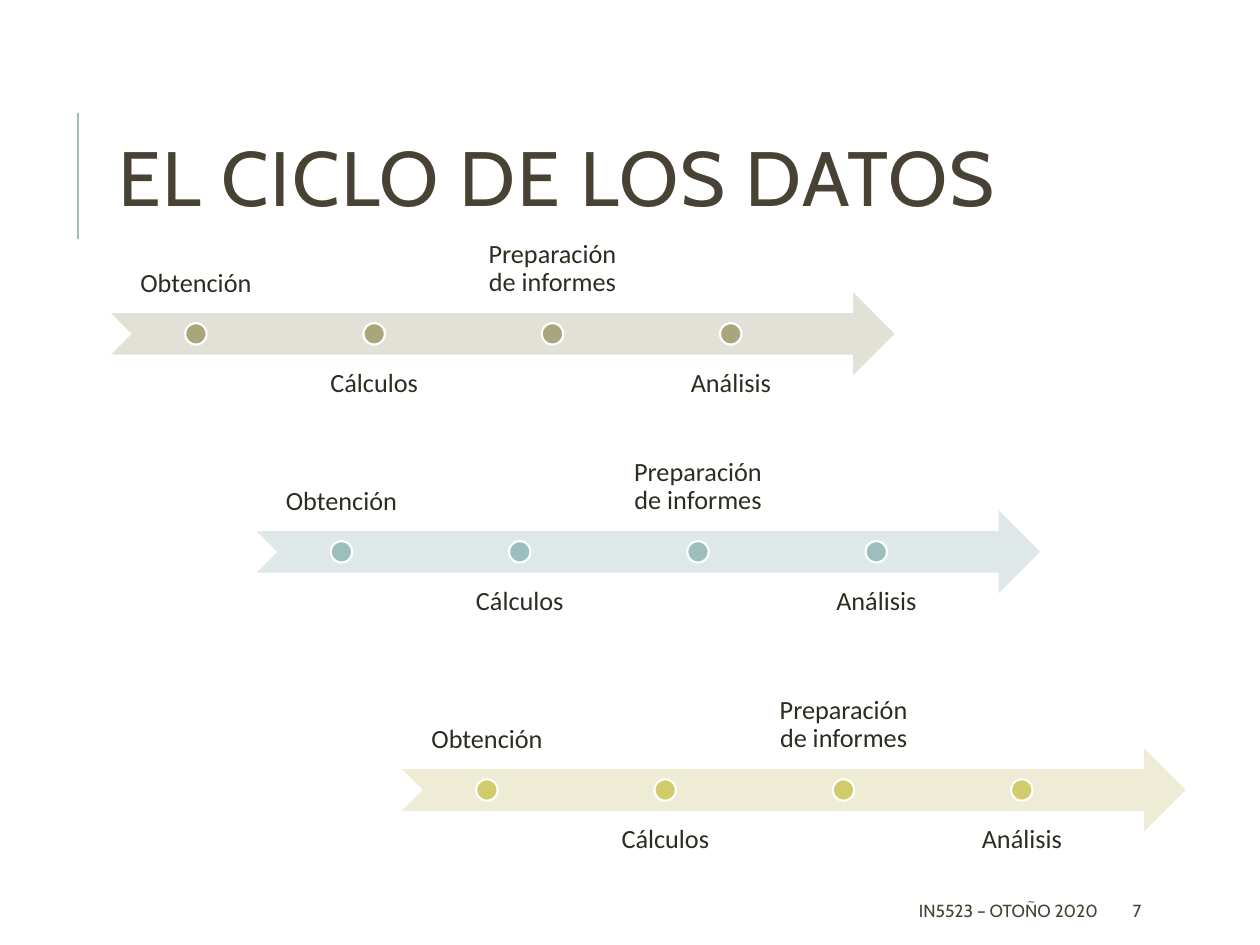
"""Build the data cycle slide: three staggered arrow timelines."""
import pptx
import pptx.util
import pptx.dml.color
import pptx.enum.shapes
import pptx.enum.text
import pptx.oxml.ns
import lxml.etree
from dataclasses import dataclass

Inches, Pt = pptx.util.Inches, pptx.util.Pt
RGB = pptx.dml.color.RGBColor.from_string
SHAPE = pptx.enum.shapes.MSO_SHAPE
ALIGN = pptx.enum.text.PP_ALIGN
ANCHOR = pptx.enum.text.MSO_ANCHOR

TITLE = "EL CICLO DE LOS DATOS"
FOOTER = "IN5523 – OTOÑO 2020"
NUMBER = "7"
STEPS = ["Obtención", "Cálculos", "Preparación de informes", "Análisis"]
TIMELINES = [
    {"top": 2.32, "arrow": "E2E1D7", "dot": "A9A57C"},
    {"top": 4.05, "arrow": "DEE8E8", "dot": "9CBEBD"},
    {"top": 5.94, "arrow": "EEECD4", "dot": "D2CB6C"},
]


@dataclass(frozen=True)
class Theme:
    heading: str = "Cabin"
    body: str = "Calibri"
    title_color: str = "474233"
    text_color: str = "2E2B21"
    accent: str = "9CBEBD"
    white: str = "FFFFFF"
    title_size: int = 44
    label_size: int = 15
    footer_size: int = 10


theme = Theme()
LEFT, STAGGER = 0.88, 1.155
ARROW_W, ARROW_H = 6.22, 0.66
LABEL_W, STEP = 1.35, 1.415
LABEL_RISE, DOT = 0.5, 0.17


def add_text(s, text, box, font, size, color, align=ALIGN.LEFT,
             anchor=ANCHOR.MIDDLE, spacing=None, inset=None):
    tb = s.shapes.add_textbox(*map(Inches, box))
    tf = tb.text_frame
    tf.word_wrap = True
    tf.vertical_anchor = anchor
    if inset is not None:
        tf.margin_left = tf.margin_right = Inches(inset)
        tf.margin_top = tf.margin_bottom = Inches(inset)
    p = tf.paragraphs[0]
    p.text = text
    p.alignment = align
    if spacing:
        p.line_spacing = spacing
    p.font.name, p.font.size = font, Pt(size)
    p.font.color.rgb = RGB(color)
    return p


def add_solid(s, kind, box, fill, line=None):
    sp = s.shapes.add_shape(kind, *map(Inches, box))
    sp.shadow.inherit = False
    sp.fill.solid()
    sp.fill.fore_color.rgb = RGB(fill)
    if line:
        sp.line.color.rgb = RGB(line)
        sp.line.width = Pt(1.25)
    else:
        sp.line.fill.background()


def add_timeline(s, left, top, arrow, dot):
    add_solid(s, SHAPE.NOTCHED_RIGHT_ARROW, (left, top, ARROW_W, ARROW_H), arrow)
    for i, step in enumerate(STEPS):
        x = left + i * STEP
        above = i % 2 == 0
        y = top - LABEL_RISE if above else top + LABEL_RISE
        add_text(s, step, (x, y, LABEL_W, ARROW_H), theme.body, theme.label_size,
                 theme.text_color, ALIGN.CENTER,
                 ANCHOR.BOTTOM if above else ANCHOR.TOP, 0.9, 0.12)
        add_solid(s, SHAPE.OVAL, (x + (LABEL_W - DOT) / 2, top + (ARROW_H - DOT) / 2,
                                  DOT, DOT), dot, theme.white)


prs = pptx.Presentation()
prs.slide_width, prs.slide_height = Inches(10), Inches(7.5)
s = prs.slides.add_slide(prs.slide_layouts[6])

rule = s.shapes.add_connector(pptx.enum.shapes.MSO_CONNECTOR.STRAIGHT,
                              *map(Inches, (0.62, 1.9, 0.62, 0.9)))
rule.line.color.rgb = RGB(theme.accent)
rule.line.width = Pt(1.5)
lxml.etree.SubElement(rule._element.spPr, pptx.oxml.ns.qn("a:effectLst"))

p = add_text(s, TITLE, (0.84, 0.64, 7.97, 1.64), theme.heading, theme.title_size,
             theme.title_color, spacing=0.8)
p.runs[0].font._element.set("spc", "100")

for i, timeline in enumerate(TIMELINES):
    add_timeline(s, LEFT + i * STAGGER, **timeline)

for text, left, width, align in [(FOOTER, 3.97, 4.84, ALIGN.RIGHT),
                                 (NUMBER, 8.89, 0.8, ALIGN.LEFT)]:
    add_text(s, text, (left, 7.08, width, 0.3), theme.heading, theme.footer_size,
             theme.title_color, align)

prs.save("out.pptx")
